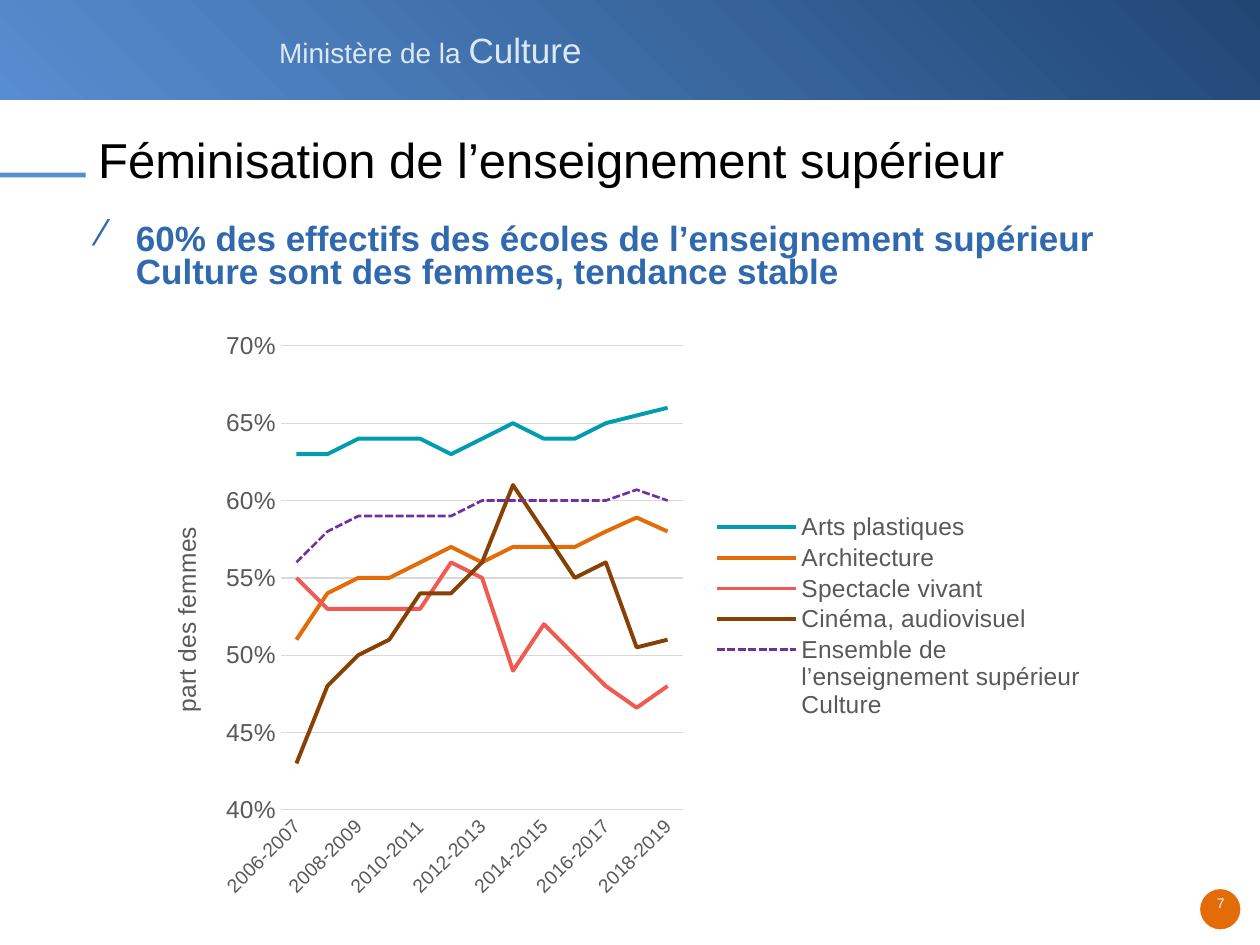
from dataclasses import dataclass, field
from typing import Any

from lxml.etree import SubElement
from pptx import Presentation
from pptx.chart.data import CategoryChartData
from pptx.dml.color import RGBColor
from pptx.enum.chart import XL_CHART_TYPE as ChartType
from pptx.enum.chart import XL_LEGEND_POSITION as LegendPosition
from pptx.enum.chart import XL_TICK_MARK as TickMark
from pptx.enum.dml import MSO_LINE as LineStyle
from pptx.enum.shapes import MSO_SHAPE as ShapeKind
from pptx.enum.text import PP_ALIGN as Align
from pptx.oxml.ns import qn
from pptx.util import Cm, Pt

FONT = "Arial"
COLORS = {
    "navy": "204674", "blue": "578ED1", "pale": "DDE8F6", "heading": "3069AE",
    "orange": "E36C09", "white": "FFFFFF", "black": "000000", "gray": "595959",
    "grid": "D9D9D9", "teal": "009DAE", "coral": "F05A50", "brown": "884105",
    "purple": "7030A0",
}


@dataclass
class TextRun:
    text: str
    size: float
    color: str
    bold: bool = False


@dataclass
class TextBlock:
    box: tuple[float, float, float, float]
    runs: list[TextRun]
    frame_format: dict[str, Any] = field(default_factory=dict)
    paragraph_format: dict[str, Any] = field(default_factory=dict)
    bullet: str = ""


@dataclass
class Trend:
    name: str
    percents: list[float]
    color: str
    width: float = 2.25
    dash: Any = None


TEXTS = [
    TextBlock((5.38, 0.46, 6.68, 1.12),
              [TextRun("Ministère de la ", 16, "pale"), TextRun("Culture", 20, "pale")],
              {"word_wrap": False}),
    TextBlock((24.23, 17.91, 0.76, 0.58), [TextRun("7", 8, "white")],
              {"word_wrap": False, "margin_left": Cm(0.13), "margin_right": Cm(0.13)},
              {"alignment": Align.CENTER}),
    TextBlock((1.73, 4.42, 22.58, 2.0),
              [TextRun("60% des effectifs des écoles de l’enseignement supérieur "
                       "Culture sont des femmes, tendance stable", 20, "heading", True)],
              {"word_wrap": True}, {"line_spacing": Pt(19)}, "⁄"),
    TextBlock((1.73, 2.69, 22.56, 2.06),
              [TextRun("Féminisation de l’enseignement supérieur", 28, "black")],
              {"word_wrap": True}, {"line_spacing": Pt(28)}),
]

YEARS = [f"{year}-{year + 1}" for year in range(2006, 2019)]
TRENDS = [
    Trend("Arts plastiques",
          [63, 63, 64, 64, 64, 63, 64, 65, 64, 64, 65, 65.5, 66], "teal"),
    Trend("Architecture",
          [51, 54, 55, 55, 56, 57, 56, 57, 57, 57, 58, 58.9, 58], "orange"),
    Trend("Spectacle vivant",
          [55, 53, 53, 53, 53, 56, 55, 49, 52, 50, 48, 46.6, 48], "coral"),
    Trend("Cinéma, audiovisuel",
          [43, 48, 50, 51, 54, 54, 56, 61, 58, 55, 56, 50.5, 51], "brown"),
    Trend("Ensemble de l’enseignement supérieur Culture",
          [56, 58, 59, 59, 59, 59, 60, 60, 60, 60, 60, 60.7, 60],
          "purple", 1.5, LineStyle.SQUARE_DOT),
]


def rgb(name: str) -> RGBColor:
    return RGBColor.from_string(COLORS[name])


def apply(target: Any, values: dict[str, Any]) -> None:
    for name, value in values.items():
        setattr(target, name, value)


def style_font(font: Any, size: float, color: str, bold: bool = False) -> None:
    apply(font, {"name": FONT, "size": Pt(size), "bold": bold})
    font.color.rgb = rgb(color)


def style_line(line: Any, color: str, width: float) -> None:
    line.color.rgb = rgb(color)
    line.width = Pt(width)


def add_block(slide: Any, kind: Any, box: tuple, color: str) -> Any:
    shape = slide.shapes.add_shape(kind, *map(Cm, box))
    shape.shadow.inherit = False
    shape.fill.solid()
    shape.fill.fore_color.rgb = rgb(color)
    shape.line.fill.background()
    return shape


def add_bullet(paragraph: Any, character: str) -> None:
    properties = paragraph._p.get_or_add_pPr()
    properties.set("marL", str(Cm(0.76)))
    properties.set("indent", str(-Cm(0.76)))
    color = SubElement(properties, qn("a:buClr"))
    SubElement(color, qn("a:srgbClr"), val=COLORS["heading"])
    SubElement(properties, qn("a:buChar"), char=character)


def add_text(slide: Any, block: TextBlock) -> None:
    frame = slide.shapes.add_textbox(*map(Cm, block.box)).text_frame
    apply(frame, block.frame_format)
    paragraph = frame.paragraphs[0]
    if block.bullet:
        add_bullet(paragraph, block.bullet)
    apply(paragraph, block.paragraph_format)
    for item in block.runs:
        run = paragraph.add_run()
        run.text = item.text
        style_font(run.font, item.size, item.color, item.bold)


def place(element: Any, inner: bool = False, **fractions: float) -> None:
    for existing in element.findall(qn("c:layout")):
        element.remove(existing)
    layout = element.makeelement(qn("c:layout"))
    manual = SubElement(layout, qn("c:manualLayout"))
    if inner:
        SubElement(manual, qn("c:layoutTarget"), val="inner")
    for name in ("x", "y"):
        SubElement(manual, qn(f"c:{name}Mode"), val="edge")
    for name, value in fractions.items():
        SubElement(manual, qn(f"c:{name}"), val=str(value))
    overlay = element.find(qn("c:overlay"))
    if overlay is None:
        element.insert(0, layout)
    else:
        overlay.addprevious(layout)


def rotate(element: Any, degrees: int) -> None:
    body = next(element.iter(qn("a:bodyPr")))
    body.set("rot", str(degrees * 60000))
    body.set("vert", "horz")


def style_axes(chart: Any) -> None:
    years, shares = chart.category_axis, chart.value_axis
    for axis, size in ((years, 11), (shares, 14)):
        apply(axis, {"major_tick_mark": TickMark.NONE, "minor_tick_mark": TickMark.NONE})
        style_font(axis.tick_labels.font, size, "gray")
    style_line(years.format.line, "grid", 0.75)
    rotate(years._element.find(qn("c:txPr")), -45)
    offset = years._element.find(qn("c:lblOffset"))
    skip = offset.makeelement(qn("c:tickLblSkip"), {"val": "2"})
    offset.addnext(skip)

    apply(shares, {"minimum_scale": 0.4, "maximum_scale": 0.7, "major_unit": 0.05,
                   "has_major_gridlines": True})
    apply(shares.tick_labels, {"number_format": "0%", "number_format_is_linked": False})
    shares.format.line.fill.background()
    style_line(shares.major_gridlines.format.line, "grid", 0.75)
    title = shares.axis_title
    title.text_frame.text = "part des femmes"
    style_font(title.text_frame.paragraphs[0].runs[0].font, 14, "gray")
    rotate(title._element, -90)
    place(title._element, x=0.03, y=0.34)


def add_trend_chart(slide: Any) -> None:
    data = CategoryChartData(number_format="0%")
    data.categories = YEARS
    for trend in TRENDS:
        data.add_series(trend.name, [round(value / 100, 3) for value in trend.percents])
    box = map(Cm, (2.77, 6.5, 19.3, 11.84))
    chart = slide.shapes.add_chart(ChartType.LINE, *box, data).chart
    apply(chart, {"has_title": False, "has_legend": True})
    style_font(chart.font, 14, "black")
    chart.plots[0].vary_by_categories = False
    for series, trend in zip(chart.plots[0].series, TRENDS):
        series.smooth = False
        style_line(series.format.line, trend.color, trend.width)
        if trend.dash:
            series.format.line.dash_style = trend.dash
    style_axes(chart)
    apply(chart.legend, {"position": LegendPosition.RIGHT, "include_in_layout": False})
    style_font(chart.legend.font, 14, "gray")
    place(chart.legend._element, x=0.6, y=0.32, w=0.39, h=0.36)
    plot_area = chart._chartSpace.chart.plotArea
    place(plot_area, inner=True, x=0.15, y=0.04, w=0.42, h=0.79)


def main() -> None:
    presentation = Presentation()
    apply(presentation, {"slide_width": Cm(25.4), "slide_height": Cm(19.05)})
    slide = presentation.slides.add_slide(presentation.slide_layouts[6])
    banner = add_block(slide, ShapeKind.RECTANGLE, (0, 0, 25.4, 2.01), "navy")
    banner.fill.gradient()
    banner.fill.gradient_angle = 225
    for stop, color in zip(banner.fill.gradient_stops, ("navy", "blue")):
        stop.color.rgb = rgb(color)
    add_block(slide, ShapeKind.RECTANGLE, (0, 3.48, 1.73, 0.1), "blue")
    badge = add_block(slide, ShapeKind.OVAL, (24.18, 17.91, 0.84, 0.84), "orange")
    style_line(badge.line, "white", 0.75)
    for block in TEXTS:
        add_text(slide, block)
    add_trend_chart(slide)
    presentation.save("out.pptx")


if __name__ == "__main__":
    main()
